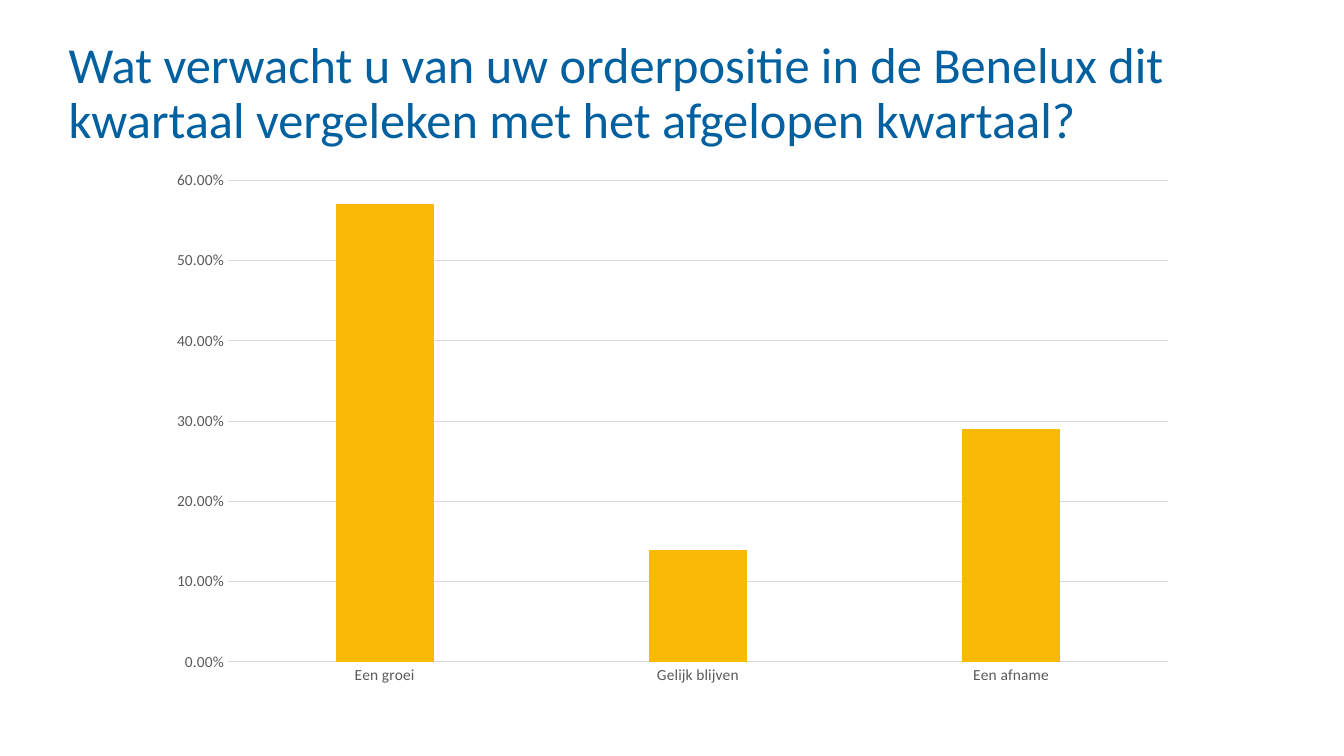
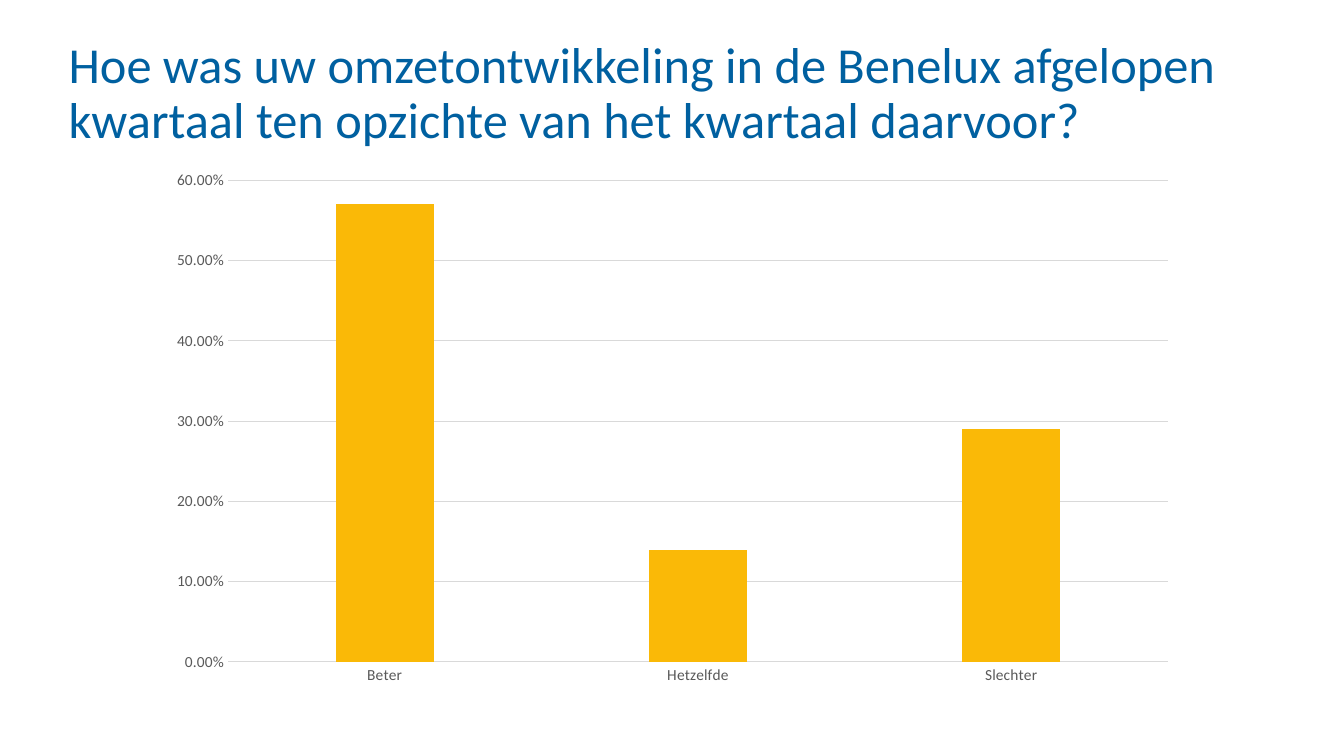
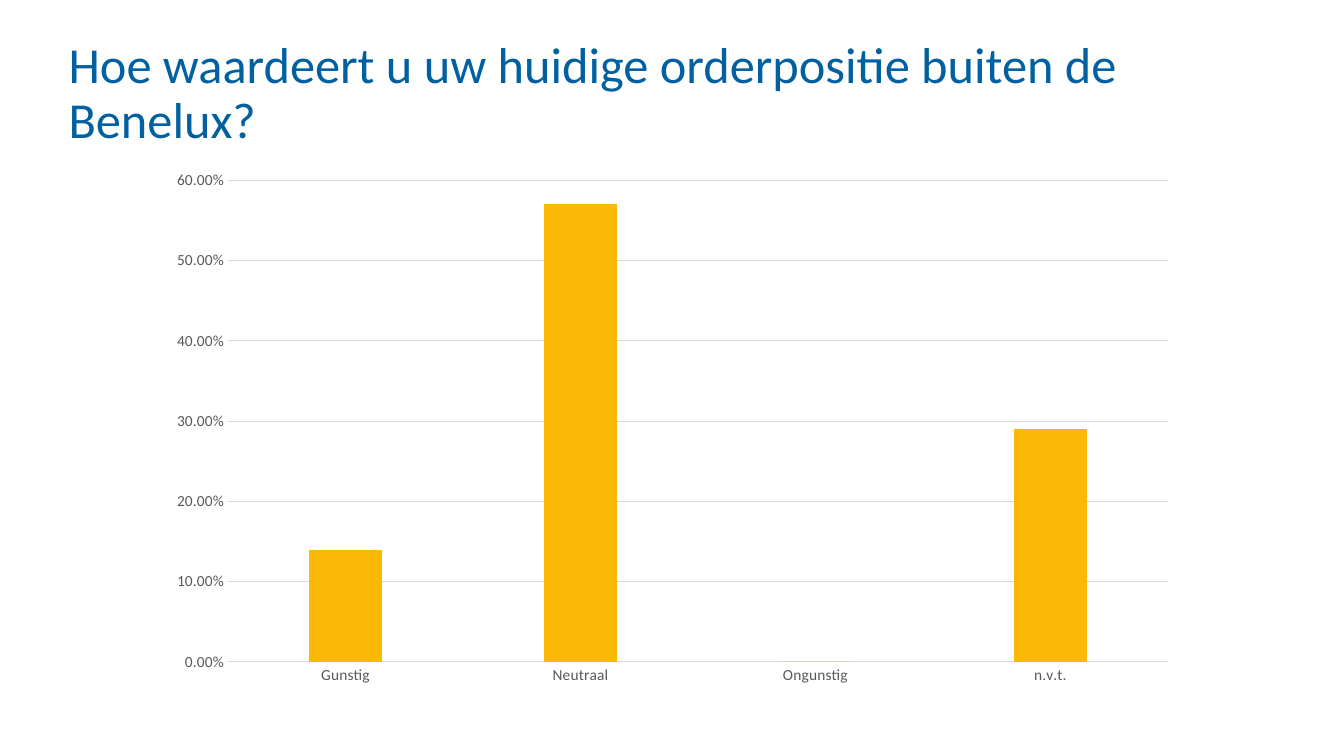
from dataclasses import dataclass

from pptx import Presentation
from pptx import util as u
from pptx.chart.data import CategoryChartData
from pptx.dml.color import RGBColor
from pptx.enum import chart as ch
from pptx.enum import text

COLORS = {"title": "0060A0", "bar": "FAB907", "label": "595959", "grid": "D9D9D9"}
FONT = "Calibri"


@dataclass(frozen=True)
class Box:
    """A place on the slide, in percent of the slide's width and height."""
    left: float
    top: float
    width: float
    height: float


@dataclass(frozen=True)
class Question:
    title: str
    answers: dict[str, float]


TITLE_BOX = Box(5.1, 5.33, 90, 10.13)
CHART_BOX = Box(11.63, 21.2, 76.8, 70.8)

QUESTIONS = [
    Question(
        "Wat verwacht u van uw orderpositie in de Benelux dit kwartaal "
        "vergeleken met het afgelopen kwartaal?",
        {"Een groei": 0.57, "Gelijk blijven": 0.14, "Een afname": 0.29},
    ),
    Question(
        "Hoe was uw omzetontwikkeling in de Benelux afgelopen kwartaal "
        "ten opzichte van het kwartaal daarvoor?",
        {"Beter": 0.57, "Hetzelfde": 0.14, "Slechter": 0.29},
    ),
    Question(
        "Hoe waardeert u uw huidige orderpositie buiten de Benelux?",
        {"Gunstig": 0.14, "Neutraal": 0.57, "Ongunstig": 0, "n.v.t.": 0.29},
    ),
]

TITLE_FRAME = {
    "margin_left": 0, "margin_top": 0, "margin_right": 0, "margin_bottom": 0,
    "word_wrap": True,
    "auto_size": text.MSO_AUTO_SIZE.NONE,
    "vertical_anchor": text.MSO_ANCHOR.TOP,
}
TITLE_PARAGRAPH = {"alignment": text.PP_ALIGN.LEFT, "line_spacing": 0.9}
CHART_FORMAT = {"has_legend": False, "has_title": False}
PLOT_FORMAT = {"gap_width": 219, "overlap": -27, "vary_by_categories": False}
AXIS_FORMAT = {
    "major_tick_mark": ch.XL_TICK_MARK.NONE,
    "minor_tick_mark": ch.XL_TICK_MARK.NONE,
}
SCALE = {
    "minimum_scale": 0, "maximum_scale": 0.6, "major_unit": 0.1,
    "has_major_gridlines": True,
}
PERCENT = {"number_format": "0.00%", "number_format_is_linked": False}


def apply(target: object, values: dict) -> None:
    for name, value in values.items():
        setattr(target, name, value)


def rgb(name: str) -> RGBColor:
    return RGBColor.from_string(COLORS[name])


def place(prs, box: Box) -> tuple[int, int, int, int]:
    """Turn a box into left, top, width and height on the slide."""
    w, h = prs.slide_width, prs.slide_height
    shares = (box.left, w), (box.top, h), (box.width, w), (box.height, h)
    return tuple(round(share * full / 100) for share, full in shares)


def style_font(font, size: float, color: str) -> None:
    apply(font, {"name": FONT, "size": u.Pt(size), "bold": False})
    font.color.rgb = rgb(color)


def style_line(line) -> None:
    line.color.rgb = rgb("grid")
    line.width = u.Pt(0.75)


def fill_title(prs, slide, title: str) -> None:
    sp = slide.shapes.title
    sp.left, sp.top, sp.width, sp.height = place(prs, TITLE_BOX)
    tf = sp.text_frame
    apply(tf, TITLE_FRAME)
    p = tf.paragraphs[0]
    apply(p, TITLE_PARAGRAPH)
    r = p.add_run()
    r.text = title
    style_font(r.font, 36, "title")


def add_answers(prs, slide, answers: dict[str, float]) -> None:
    data = CategoryChartData(number_format="0.00%")
    data.categories = list(answers)
    data.add_series("Series 1", list(answers.values()))
    chart = slide.shapes.add_chart(
        ch.XL_CHART_TYPE.COLUMN_CLUSTERED, *place(prs, CHART_BOX), data
    ).chart
    apply(chart, CHART_FORMAT)
    style_font(chart.font, 10, "label")

    plot = chart.plots[0]
    apply(plot, PLOT_FORMAT)
    fill = plot.series[0].format.fill
    fill.solid()
    fill.fore_color.rgb = rgb("bar")

    for axis in (chart.category_axis, chart.value_axis):
        apply(axis, AXIS_FORMAT)
        style_font(axis.tick_labels.font, 11, "label")
    style_line(chart.category_axis.format.line)

    values = chart.value_axis
    apply(values, SCALE)
    apply(values.tick_labels, PERCENT)
    values.format.line.fill.background()
    style_line(values.major_gridlines.format.line)


def main() -> None:
    prs = Presentation()
    prs.slide_width, prs.slide_height = u.Inches(13.33), u.Inches(7.5)
    title_only = prs.slide_layouts.get_by_name("Title Only")
    for question in QUESTIONS:
        slide = prs.slides.add_slide(title_only)
        fill_title(prs, slide, question.title)
        add_answers(prs, slide, question.answers)
    prs.save("out.pptx")


if __name__ == "__main__":
    main()
